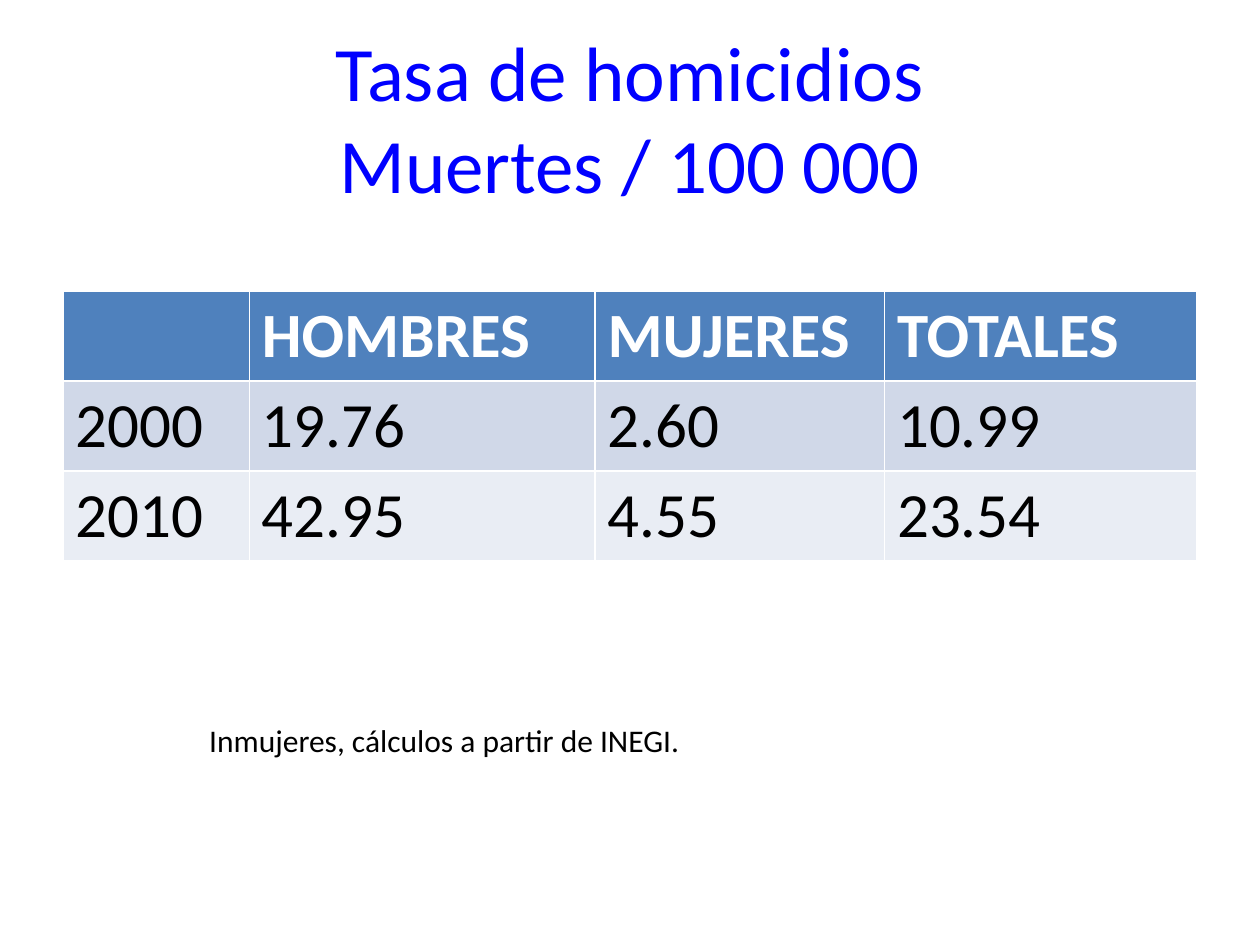
import pptx
import pptx.dml.color
import pptx.enum.text
import pptx.util

Pt = pptx.util.Pt


def style_text(frame, size, colour, bold=False):
    for para in frame.paragraphs:
        for span in para.runs:
            span.font.name = "Calibri"
            span.font.size = Pt(size)
            span.font.bold = bold
            span.font.color.rgb = pptx.dml.color.RGBColor.from_string(colour)


deck = pptx.Presentation()
deck.slide_width, deck.slide_height = Pt(720), Pt(540)
page = deck.slides.add_slide(deck.slide_layouts[5])  # Title Only

# Title
title = page.shapes.title
title.left, title.top, title.width, title.height = Pt(36), Pt(21.6), Pt(648), Pt(90)
title.text_frame.text = "Tasa de homicidios\vMuertes / 100 000"
title.text_frame.vertical_anchor = pptx.enum.text.MSO_ANCHOR.MIDDLE
title.text_frame.paragraphs[0].alignment = pptx.enum.text.PP_ALIGN.CENTER
style_text(title.text_frame, 44, "0000FF")

# Homicide rates; the default table style supplies the white borders
rates = [
    ["", "HOMBRES", "MUJERES", "TOTALES"],
    ["2000", "19.76", "2.60", "10.99"],
    ["2010", "42.95", "4.55", "23.54"],
]
row_fills = ["4F81BD", "D0D8E8", "E9EDF4"]
column_widths = [106.5, 197.5, 165.5, 178.5]

table = page.shapes.add_table(
    len(rates), len(column_widths), Pt(36), Pt(166.5), Pt(648), Pt(151.2)
).table
for column, width in zip(table.columns, column_widths):
    column.width = Pt(width)
for row, values, fill in zip(table.rows, rates, row_fills):
    is_header = values is rates[0]
    for cell, value in zip(row.cells, values):
        cell.text_frame.text = value
        cell.fill.solid()
        cell.fill.fore_color.rgb = pptx.dml.color.RGBColor.from_string(fill)
        style_text(cell.text_frame, 36, "FFFFFF" if is_header else "000000", is_header)

# Source note
note = page.shapes.add_textbox(Pt(112.5), Pt(408.2), Pt(473), Pt(29))
note.text_frame.word_wrap = True
note.text_frame.auto_size = pptx.enum.text.MSO_AUTO_SIZE.SHAPE_TO_FIT_TEXT
note.text_frame.text = "Inmujeres, cálculos a partir de INEGI."
style_text(note.text_frame, 18, "000000")

deck.save("out.pptx")
